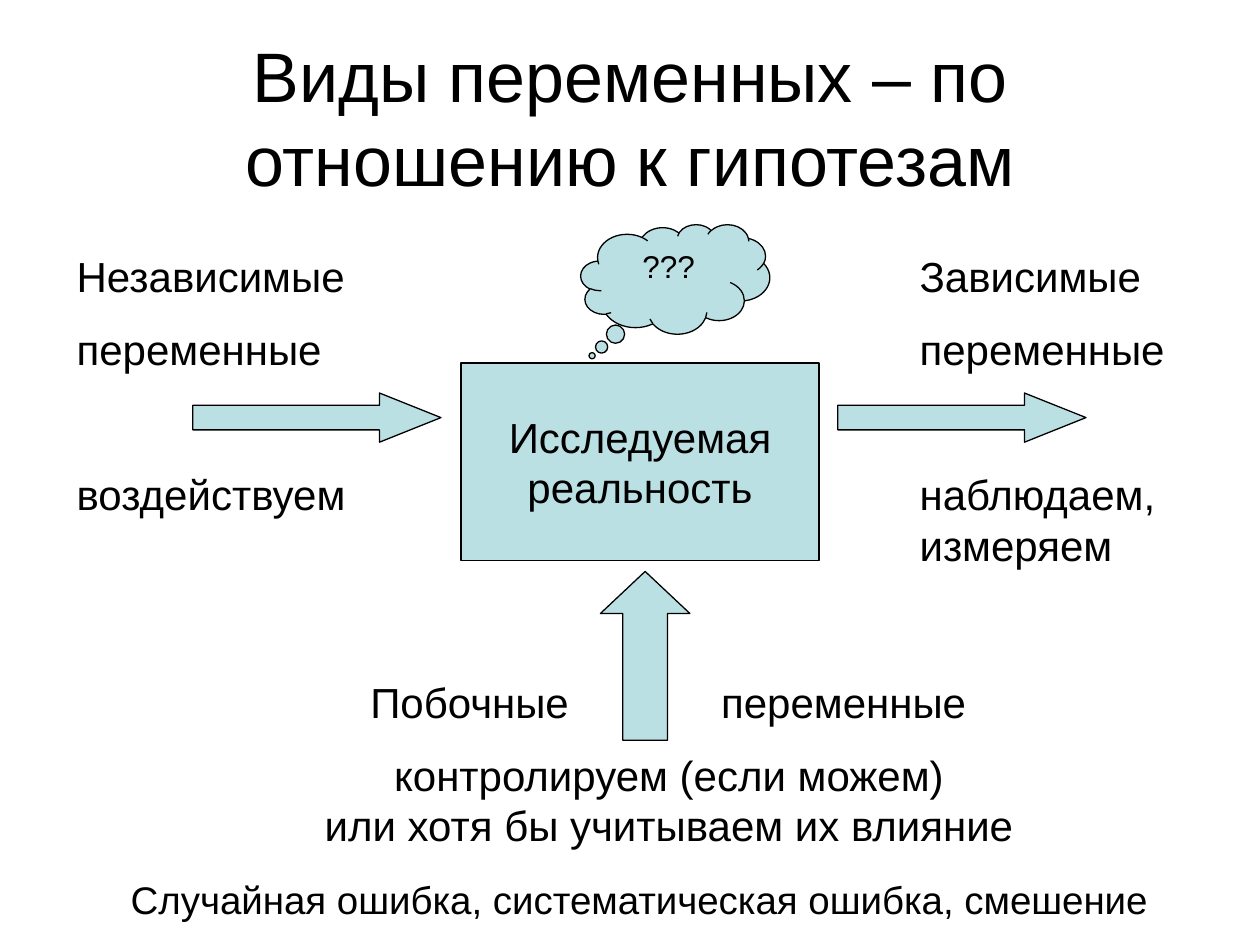
"""Build a slide on kinds of variables in relation to hypotheses."""
from lxml.etree import SubElement
from pptx import Presentation
from pptx.dml.color import RGBColor as RGB
from pptx.enum.shapes import MSO_SHAPE as Kind
from pptx.enum.text import MSO_ANCHOR as Anchor, PP_ALIGN as Align
from pptx.oxml.ns import qn
from pptx.util import Pt

COLORS = {"fill": "BBE0E3", "ink": "000000"}
FONT = "Arial"


def write(shape, lines, size, align=Align.CENTER, gaps=(), anchor=Anchor.TOP, wrap=True):
    """Set the lines of a shape, with the space before each one."""
    frame = shape.text_frame
    frame.word_wrap = wrap
    frame.vertical_anchor = anchor
    frame.text = "\n".join(lines)
    for i, para in enumerate(frame.paragraphs):
        para.alignment = align
        para.space_before = Pt(gaps[i] if gaps else 0)
        for run in para.runs:
            run.font.size = Pt(size)
            run.font.name = FONT
            run.font.color.rgb = RGB.from_string(COLORS["ink"])


def draw(kind, box, adjs=()):
    """Add a filled and outlined preset shape."""
    shape = slide.shapes.add_shape(kind, *map(Pt, box))
    shape.shadow.inherit = False
    shape.fill.solid()
    shape.fill.fore_color.rgb = RGB.from_string(COLORS["fill"])
    shape.line.color.rgb = RGB.from_string(COLORS["ink"])
    shape.line.width = Pt(0.75)
    for i, value in enumerate(adjs):
        shape.adjustments[i] = value
    return shape


deck = Presentation()
deck.slide_width, deck.slide_height = Pt(720), Pt(540)
slide = deck.slides.add_slide(deck.slide_layouts[5])

title = slide.shapes.title
title.left, title.top, title.width, title.height = map(Pt, (36, 21.6, 648, 90))
write(title, ["Виды переменных – по отношению к гипотезам"], 40, anchor=Anchor.MIDDLE)

center = draw(Kind.RECTANGLE, (263.5, 207.4, 204.5, 113))
write(center, ["Исследуемая", "реальность"], 24, anchor=Anchor.MIDDLE, wrap=False)

sides = [
    (36.7, 193, 165.6, ["Независимые", "переменные", "воздействуем"]),
    (518.4, 181.4, 196.6, ["Зависимые", "переменные", "наблюдаем,\vизмеряем"]),
]
for left, width, height, lines in sides:
    box = slide.shapes.add_textbox(Pt(left), Pt(139.7), Pt(width), Pt(height))
    write(box, lines, 24, Align.LEFT, (0, 13, 54))

for left in (110.2, 478.8):
    draw(Kind.RIGHT_ARROW, (left, 224.6, 141.8, 28.1), (0.5, 1.25))
rise = draw(Kind.RIGHT_ARROW, (320.4, 349.2, 96.5, 51.1), (0.5, 0.47))
rise.rotation = 270

below = slide.shapes.add_textbox(Pt(155.5), Pt(383), Pt(453.6), Pt(108))
write(below, ["\tПобочные\tпеременные",
              "контролируем (если можем)\vили хотя бы учитываем их влияние"],
      24, gaps=(0, 13))
first = below.text_frame.paragraphs[0]
first.alignment = Align.LEFT
tabs = SubElement(first._p.get_or_add_pPr(), qn("a:tabLst"))
for stop in (49, 249.5):
    SubElement(tabs, qn("a:tab"), pos=str(Pt(stop)), algn="l")

cloud = draw(Kind.CLOUD_CALLOUT, (331.9, 128.2, 108, 62.6), (-0.44, 0.7))
write(cloud, ["???"], 18)

foot = slide.shapes.add_textbox(Pt(19.4), Pt(496.8), Pt(692), Pt(33.8))
write(foot, ["Случайная ошибка, систематическая ошибка, cмешение"], 22)

deck.save("out.pptx")
